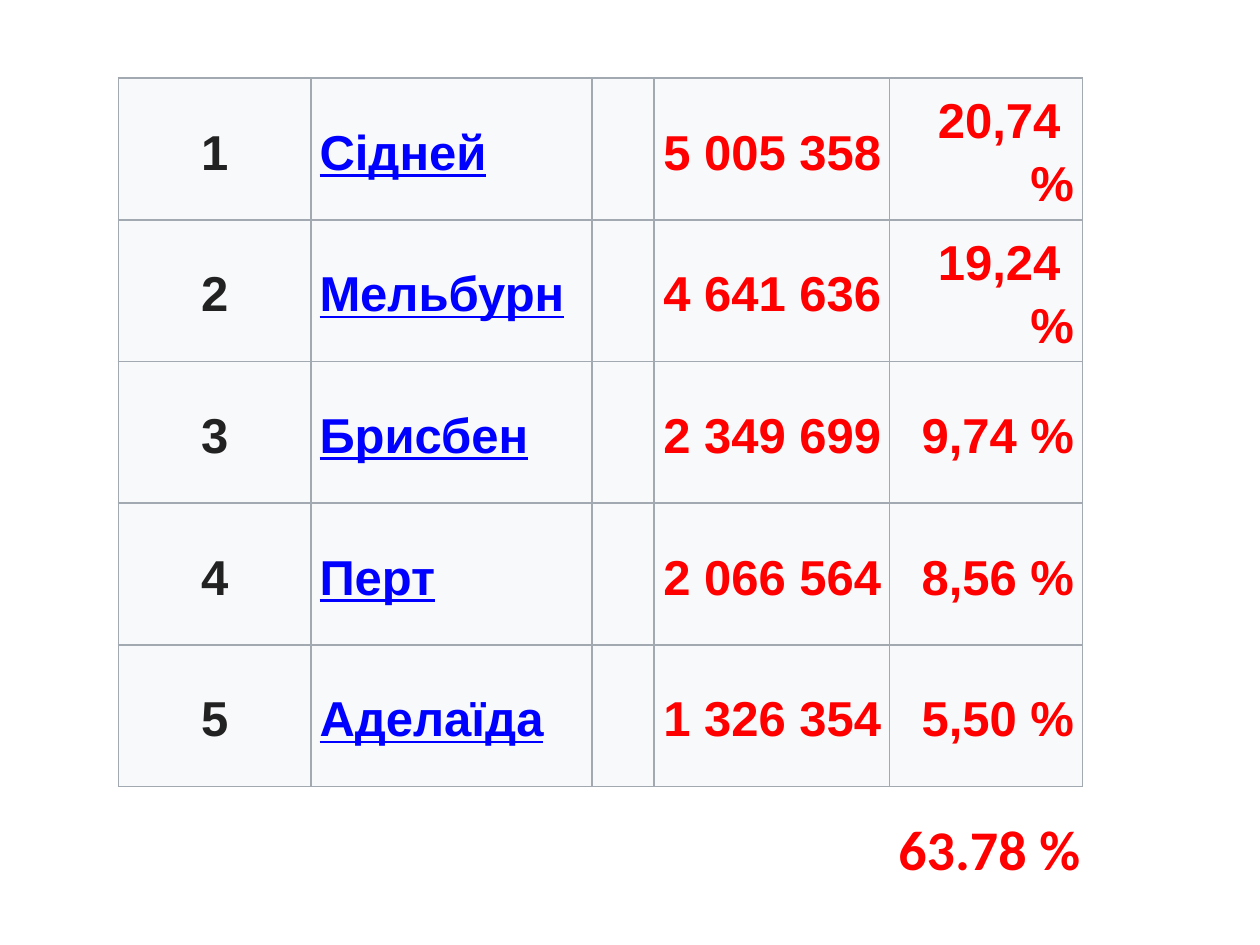
from lxml.etree import SubElement
from pptx import Presentation
from pptx.dml.color import RGBColor
from pptx.enum.text import MSO_ANCHOR, MSO_AUTO_SIZE, PP_ALIGN
from pptx.oxml.ns import qn
from pptx.util import Pt

# Content: rank, city, gap, people, share
ROWS = [
    ("1", "Сідней", "", "5 005 358", "20,74 %"),
    ("2", "Мельбурн", "", "4 641 636", "19,24 %"),
    ("3", "Брисбен", "", "2 349 699", "9,74 %"),
    ("4", "Перт", "", "2 066 564", "8,56 %"),
    ("5", "Аделаїда", "", "1 326 354", "5,50 %"),
]
TOTAL = "63.78 %"

# Format
HEX = {"rank": "222222", "city": "0000FF", "value": "FF0000",
       "cell": "F8F9FA", "edge": "A2A9B1"}
COLS = [  # width, alignment, colour, underline
    (110.2, PP_ALIGN.CENTER, "rank", False),
    (160.6, PP_ALIGN.LEFT, "city", True),
    (35.3, PP_ALIGN.LEFT, "rank", False),
    (134.6, PP_ALIGN.RIGHT, "value", False),
    (110.2, PP_ALIGN.RIGHT, "value", False),
]
LEFT, TOP, HIGH = 67.6, 44.6, 81
CELL = {"margin_left": Pt(4.8), "margin_right": Pt(4.8),
        "margin_top": Pt(2.4), "margin_bottom": Pt(2.4),
        "vertical_anchor": MSO_ANCHOR.MIDDLE}
PARA = {"line_spacing": 1.15, "space_before": Pt(12), "space_after": Pt(12)}
FONT = {"name": "Arial", "size": Pt(28), "bold": True}
SUM = {"name": "Calibri", "size": Pt(32), "bold": True}
BOX = {"word_wrap": True, "auto_size": MSO_AUTO_SIZE.SHAPE_TO_FIT_TEXT,
       "vertical_anchor": MSO_ANCHOR.MIDDLE}


def style(item, form):
    for key, val in form.items():
        setattr(item, key, val)


def write(para, text, form, tint):
    run = para.add_run()
    run.text = text
    style(run.font, form)
    run.font.color.rgb = RGBColor.from_string(HEX[tint])


def edge(cell):
    props = cell._tc.get_or_add_tcPr()
    for side in ("a:lnL", "a:lnR", "a:lnT", "a:lnB"):
        line = SubElement(props, qn(side), w=str(Pt(1)))
        fill = SubElement(line, qn("a:solidFill"))
        SubElement(fill, qn("a:srgbClr"), val=HEX["edge"])


deck = Presentation()
deck.slide_width, deck.slide_height = Pt(720), Pt(540)
slide = deck.slides.add_slide(deck.slide_layouts[6])

# City table
wide = sum(col[0] for col in COLS)
table = slide.shapes.add_table(len(ROWS), len(COLS), Pt(LEFT), Pt(TOP),
                               Pt(wide), Pt(HIGH * len(ROWS))).table
style(table, {"first_row": False, "horz_banding": False})
for col, (width, *_) in zip(table.columns, COLS):
    col.width = Pt(width)
for r, row in enumerate(ROWS):
    table.rows[r].height = Pt(HIGH)
    for c, (text, (_, align, tint, under)) in enumerate(zip(row, COLS)):
        cell = table.cell(r, c)
        style(cell, CELL)
        edge(cell)
        cell.fill.solid()
        cell.fill.fore_color.rgb = RGBColor.from_string(HEX["cell"])
        if text:
            para = cell.text_frame.paragraphs[0]
            style(para, PARA | {"alignment": align})
            # Numbers hold together with no-break spaces
            write(para, text.replace(" ", chr(160)),
                  FONT | {"underline": under}, tint)

# Total share
frame = slide.shapes.add_textbox(Pt(506.2), Pt(461.5),
                                 Pt(135.4), Pt(46)).text_frame
style(frame, BOX)
write(frame.paragraphs[0], TOTAL, SUM, "value")

deck.save("out.pptx")
